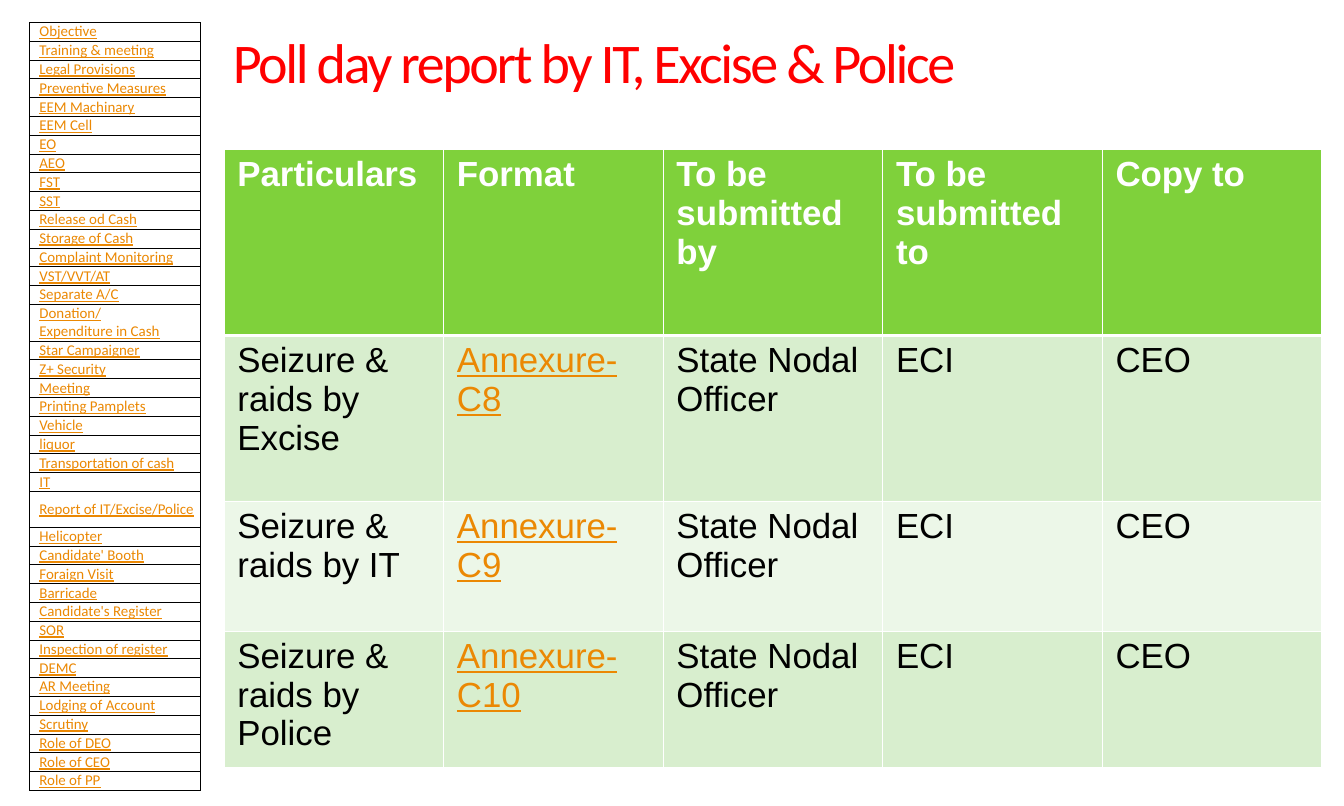
import copy
from dataclasses import dataclass

import pptx
import pptx.dml.color
import pptx.enum.text
import pptx.oxml
import pptx.oxml.ns
import pptx.util

PX = 9144  # EMU per px, 100 px to the inch
POINT = 12700
MIDDLE = pptx.enum.text.MSO_ANCHOR.MIDDLE
TOP = pptx.enum.text.MSO_ANCHOR.TOP


@dataclass(frozen=True)
class Theme:
    title: str = "FF0000"
    link: str = "EB8803"
    text: str = "000000"
    white: str = "FFFFFF"
    header: str = "7FD13B"
    bands: tuple = ("D8EECE", "ECF7E8")
    title_font: str = "Calibri"
    table_font: str = "Arial"
    title_size: int = 45
    table_size: int = 28
    menu_size: int = 12


THEME = Theme()

MENU = [
    "Objective", "Training & meeting", "Legal Provisions", "Preventive Measures",
    "EEM Machinary", "EEM Cell", "EO", "AEO", "FST", "SST", "Release od Cash",
    "Storage of Cash", "Complaint Monitoring", "VST/VVT/AT", "Separate A/C",
    "Donation/\nExpenditure in Cash", "Star Campaigner", "Z+ Security", "Meeting",
    "Printing Pamplets", "Vehicle", "liquor", "Transportation of cash", "IT",
    "Report of IT/Excise/Police", "Helicopter", "Candidate' Booth", "Foraign Visit",
    "Barricade", "Candidate's Register", "SOR", "Inspection of register", "DEMC",
    "AR Meeting", "Lodging of Account", "Scrutiny", "Role of DEO", "Role of CEO",
    "Role of PP",
]
TALL_MENU_ROWS = {"Donation/\nExpenditure in Cash": 41, "Report of IT/Excise/Police": 40}

HEADINGS = ["Particulars", "Format", "To be submitted by", "To be submitted to", "Copy to"]
REPORTS = [("Excise", "C8"), ("IT", "C9"), ("Police", "C10")]


def px(length):
    return pptx.util.Emu(length * PX)


def write(frame, text, font, size, color, bold=False, underline=False,
          spacing=None, line_spacing=None, indent=0):
    """Fill a text frame with one formatted paragraph."""
    paragraph = frame.paragraphs[0]
    paragraph.text = text
    if line_spacing:
        paragraph.line_spacing = line_spacing
    if indent:
        paragraph._p.get_or_add_pPr().set("marL", str(px(indent)))
    for run in paragraph.runs:
        run.font.name = font
        run.font.size = pptx.util.Pt(size)
        run.font.bold = bold
        run.font.underline = underline
        run.font.color.rgb = pptx.dml.color.RGBColor.from_string(color)
        if spacing is not None:
            run._r.get_or_add_rPr().set("spc", str(spacing))
    # A line break keeps the size of the text around it
    for line_break in paragraph._p.findall(pptx.oxml.ns.qn("a:br")):
        line_break.append(copy.deepcopy(paragraph.runs[0]._r.rPr))


def set_margins(target, left, top, right, bottom):
    target.margin_left, target.margin_top = px(left), px(top)
    target.margin_right, target.margin_bottom = px(right), px(bottom)


def add_title(slide, text, left, top, width, height):
    frame = slide.shapes.add_textbox(px(left), px(top), px(width), px(height)).text_frame
    frame.word_wrap = True
    frame.vertical_anchor = TOP
    set_margins(frame, 10, 5, 10, 5)
    write(frame, text, THEME.title_font, THEME.title_size, THEME.title,
          spacing=-190, line_spacing=0.9)


def add_grid(slide, left, top, columns, rows):
    """Add a plain table with the given column widths and row heights."""
    table = slide.shapes.add_table(len(rows), len(columns), px(left), px(top),
                                   px(sum(columns)), px(sum(rows))).table
    table.first_row = table.horz_banding = False
    for column, width in zip(table.columns, columns):
        column.width = px(width)
    for row, height in zip(table.rows, rows):
        row.height = px(height)
    return table


def style_cell(cell, margins, anchor, border, widths, fill=None):
    """Set margins, borders (left, right, top, bottom in points) and fill."""
    set_margins(cell, *margins)
    cell.vertical_anchor = anchor
    properties = cell._tc.get_or_add_tcPr()
    for side, width in zip("LRTB", widths):
        properties.append(pptx.oxml.parse_xml(
            f'<a:ln{side} {pptx.oxml.ns.nsdecls("a")} w="{int(width * POINT)}">'
            f'<a:solidFill><a:srgbClr val="{border}"/></a:solidFill></a:ln{side}>'))
    if fill:
        cell.fill.solid()
        cell.fill.fore_color.rgb = pptx.dml.color.RGBColor.from_string(fill)
    else:
        cell.fill.background()


def add_menu(slide):
    heights = [TALL_MENU_ROWS.get(entry, 21) for entry in MENU]
    table = add_grid(slide, 33, 25, [191], heights)
    for index, entry in enumerate(MENU):
        cell = table.cell(index, 0)
        style_cell(cell, (1, 0, 1, 0), MIDDLE, THEME.text, [0.5] * 4)
        write(cell.text_frame, entry, THEME.title_font, THEME.menu_size, THEME.link,
              underline=True, indent=10)


def add_report_table(slide):
    table = add_grid(slide, 250, 167, [245] * 5, [208, 185, 145, 145])
    body = [[f"Seizure & raids by {agency}", f"Annexure-{annexure}",
             "State Nodal Officer", "ECI", "CEO"] for agency, annexure in REPORTS]
    for row, texts in enumerate([HEADINGS] + body):
        is_header = row == 0
        fill = THEME.header if is_header else THEME.bands[(row - 1) % 2]
        # A thick rule parts the header from the body
        widths = [1, 1, 3 if row == 1 else 1, 3 if is_header else 1]
        for column, text in enumerate(texts):
            is_link = column == 1 and not is_header
            color = THEME.white if is_header else THEME.link if is_link else THEME.text
            cell = table.cell(row, column)
            style_cell(cell, (15, 6, 15, 6), TOP, THEME.white, widths, fill)
            write(cell.text_frame, text, THEME.table_font, THEME.table_size, color,
                  bold=is_header, underline=is_link)


def main():
    presentation = pptx.Presentation()
    presentation.slide_width, presentation.slide_height = px(1500), px(900)
    slide = presentation.slides.add_slide(presentation.slide_layouts[6])

    # Side menu, heading and report table
    add_menu(slide)
    add_title(slide, "Poll day report by IT, Excise & Police", 250, 34, 1200, 107)
    add_report_table(slide)

    presentation.save("out.pptx")


if __name__ == "__main__":
    main()
